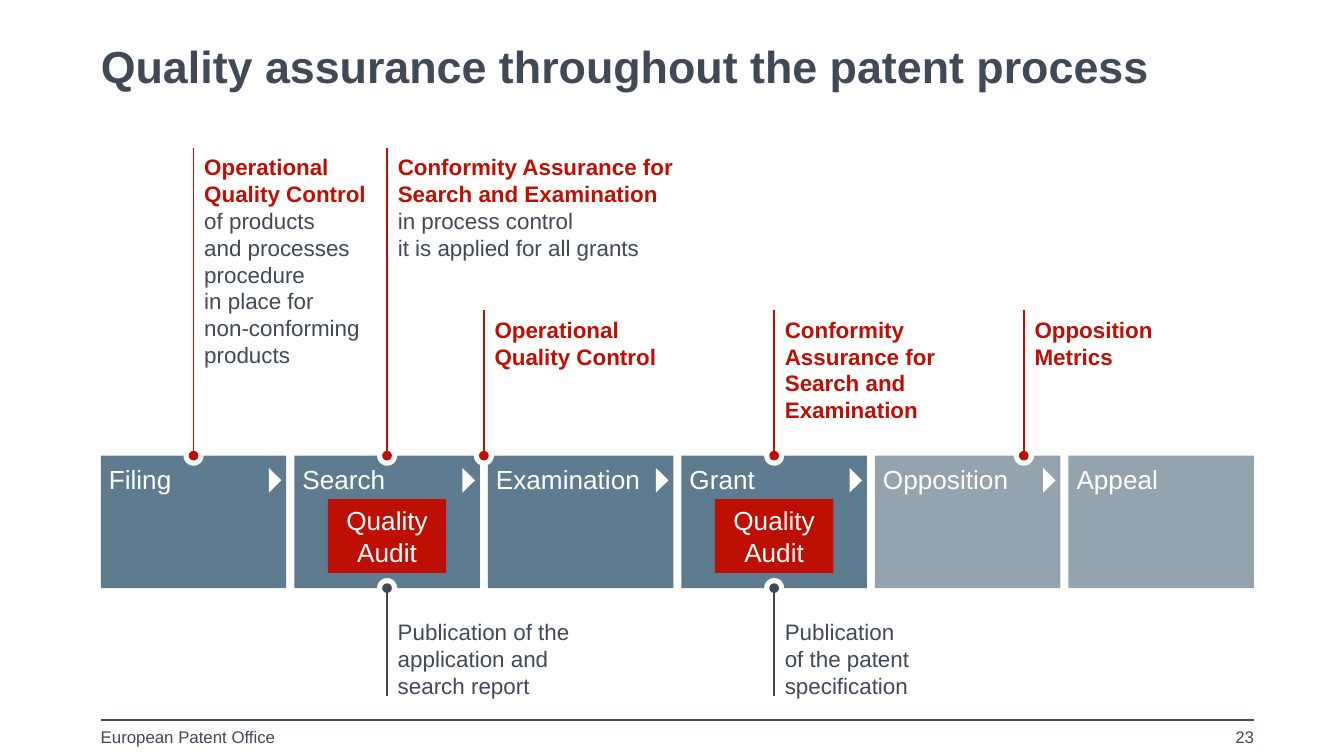
import copy

import pptx
import pptx.dml.color
import pptx.enum.shapes
import pptx.enum.text
import pptx.oxml
import pptx.oxml.ns
import pptx.util

Pt = pptx.util.Pt
RGBColor = pptx.dml.color.RGBColor
SHAPE = pptx.enum.shapes.MSO_SHAPE
ALIGN = pptx.enum.text.PP_ALIGN
ANCHOR = pptx.enum.text.MSO_ANCHOR

DARK = RGBColor(0x40, 0x49, 0x55)
STEM_DARK = RGBColor(0x3E, 0x47, 0x54)
RED = RGBColor(0xBE, 0x0F, 0x05)
BLUE = RGBColor(0x5F, 0x7B, 0x8F)
GREY = RGBColor(0x94, 0xA4, 0xAE)
WHITE = RGBColor(0xFF, 0xFF, 0xFF)

# Content
TITLE = "Quality assurance throughout the patent process"
FOOTER = "European Patent Office"
PAGE_NUMBER = "23"
STEPS = [("Filing", BLUE), ("Search", BLUE), ("Examination", BLUE),
         ("Grant", BLUE), ("Opposition", GREY), ("Appeal", GREY)]
AUDIT = "Quality Audit"
AUDITED_STEPS = [1, 3]
CONFORMITY = "Conformity Assurance for\nSearch and Examination"
CONTROL = "Operational Quality Control"
# Position in steps, level, text width, wrap, red heading, plain paragraphs
CALLOUTS = [
    (0.5, "high", 98.6, True, CONTROL,
     ["of products\nand processes", "procedure\nin place for\nnon-conforming products"]),
    (1.5, "high", 157.7, False, CONFORMITY,
     ["in process control", "it is applied for all grants"]),
    (2, "middle", 98.6, True, CONTROL, []),
    (3.5, "middle", 133.2, True, CONFORMITY, []),
    (4.79, "middle", 96.5, True, "Opposition\nMetrics", []),
    (1.5, "low", 105.8, True, None,
     ["Publication of the application and search report"]),
    (3.5, "low", 96.5, True, None,
     ["Publication\nof the patent specification"]),
]

# Layout
LEFT, RIGHT = 54, 671.8
STEP_WIDTH, STEP_GAP = 99.36, 4.32
PITCH = STEP_WIDTH + STEP_GAP
STEP_TOP, STEP_BOTTOM = 244.1, 315.1
# Level: stem start, stem end, text top, text height, dot colour, stem colour
LEVELS = {
    "high": (STEP_TOP, 79.2, 79.2, 122.4, RED, RED),
    "middle": (STEP_TOP, 166.3, 166.3, 64, RED, RED),
    "low": (STEP_BOTTOM, 373, 328.3, 49.7, DARK, STEM_DARK),
}
CALLOUT_INSETS = (5.76, 2.88, 2.88, 2.88)


def write(shape, paragraphs, size, insets=(0, 0, 0, 0), align=ALIGN.LEFT,
          anchor=ANCHOR.TOP, wrap=True):
    """Fill a shape with (text, colour, bold) paragraphs."""
    frame = shape.text_frame
    sides = ("margin_left", "margin_top", "margin_right", "margin_bottom")
    settings = {side: Pt(inset) for side, inset in zip(sides, insets)}
    settings.update(word_wrap=wrap, vertical_anchor=anchor)
    for name, value in settings.items():
        setattr(frame, name, value)
    for index, (text, colour, bold) in enumerate(paragraphs):
        paragraph = frame.add_paragraph() if index else frame.paragraphs[0]
        paragraph.text = text
        paragraph.alignment = align
        for run in paragraph.runs:
            for name, value in {"size": Pt(size), "name": "Arial", "bold": bold}.items():
                setattr(run.font, name, value)
            run.font.color.rgb = colour
        # Line breaks take the size of the text around them
        for line_break in paragraph._p.findall(pptx.oxml.ns.qn("a:br")):
            line_break.append(copy.deepcopy(paragraph.runs[0]._r.rPr))


def add_text(shapes, box, paragraphs, size, **options):
    write(shapes.add_textbox(*map(Pt, box)), paragraphs, size, **options)


def add_filled(shapes, kind, box, colour):
    shape = shapes.add_shape(kind, *map(Pt, box))
    shape.shadow.inherit = False
    shape.fill.solid()
    shape.fill.fore_color.rgb = colour
    shape.line.fill.background()
    return shape


def add_line(shapes, ends, colour, width):
    line = shapes.add_connector(pptx.enum.shapes.MSO_CONNECTOR.STRAIGHT, *map(Pt, ends))
    line.line.color.rgb = colour
    line.line.width = Pt(width)
    line._element.spPr.append(pptx.oxml.parse_xml(
        "<a:effectLst %s/>" % pptx.oxml.ns.nsdecls("a")))


def add_dot(shapes, x, y, diameter, colour):
    box = (x - diameter / 2, y - diameter / 2, diameter, diameter)
    add_filled(shapes, SHAPE.OVAL, box, colour)


def add_marker(shapes, x, level):
    start, end, _, _, dot_colour, stem_colour = LEVELS[level]
    group = shapes.add_group_shape()
    add_dot(group.shapes, x, start, 10.8, WHITE)
    add_dot(group.shapes, x, start, 5.2, dot_colour)
    add_line(group.shapes, (x, start, x, end), stem_colour, 1)


def callout_x(position):
    # Whole positions fall in the middle of a gap, halves in the middle of a step
    return LEFT + position * PITCH - STEP_GAP / 2


def main():
    presentation = pptx.Presentation()
    presentation.slide_width, presentation.slide_height = Pt(720), Pt(405)
    slide = presentation.slides.add_slide(presentation.slide_layouts[6])
    shapes = slide.shapes

    # Title and footer
    add_line(shapes, (LEFT, 385.8, RIGHT, 385.8), DARK, 0.75)
    add_text(shapes, (LEFT, 389.5, 122.4, 13.7), [(FOOTER, DARK, False)], 9)
    add_text(shapes, (RIGHT - 45.4, 389.5, 45.4, 13.7), [(PAGE_NUMBER, DARK, False)], 9,
             align=ALIGN.RIGHT)
    add_text(shapes, (LEFT, 20.9, RIGHT - LEFT, 31.7), [(TITLE, DARK, True)], 24)

    # Process steps, with an arrowhead towards the next one
    for index, (name, colour) in enumerate(STEPS):
        x = LEFT + index * PITCH
        step = add_filled(shapes, SHAPE.RECTANGLE,
                          (x, STEP_TOP, STEP_WIDTH, STEP_BOTTOM - STEP_TOP), colour)
        write(step, [(name, WHITE, False)], 14, insets=(4.3, 4.3, 2.88, 4.3))
        if index < len(STEPS) - 1:
            arrowhead = add_filled(shapes, SHAPE.ISOSCELES_TRIANGLE,
                                   (x + 86.8, 254, 13.2, 6.7), WHITE)
            arrowhead.rotation = 90

    # Audits inside their steps
    for index in AUDITED_STEPS:
        audit = add_filled(shapes, SHAPE.RECTANGLE,
                           (callout_x(index + 0.5) - 31.7, 267.4, 63.4, 39.6), RED)
        write(audit, [(AUDIT, WHITE, False)], 14, insets=(2.88,) * 4,
              align=ALIGN.CENTER, anchor=ANCHOR.MIDDLE)

    # Callouts
    for position, level, width, wrap, heading, details in CALLOUTS:
        x = callout_x(position)
        top, height = LEVELS[level][2:4]
        paragraphs = [(heading, RED, True)] if heading else []
        paragraphs += [(detail, DARK, False) for detail in details]
        add_text(shapes, (x, top, width, height), paragraphs, 12,
                 insets=CALLOUT_INSETS, wrap=wrap)
        add_marker(shapes, x, level)

    presentation.save("out.pptx")


if __name__ == "__main__":
    main()
